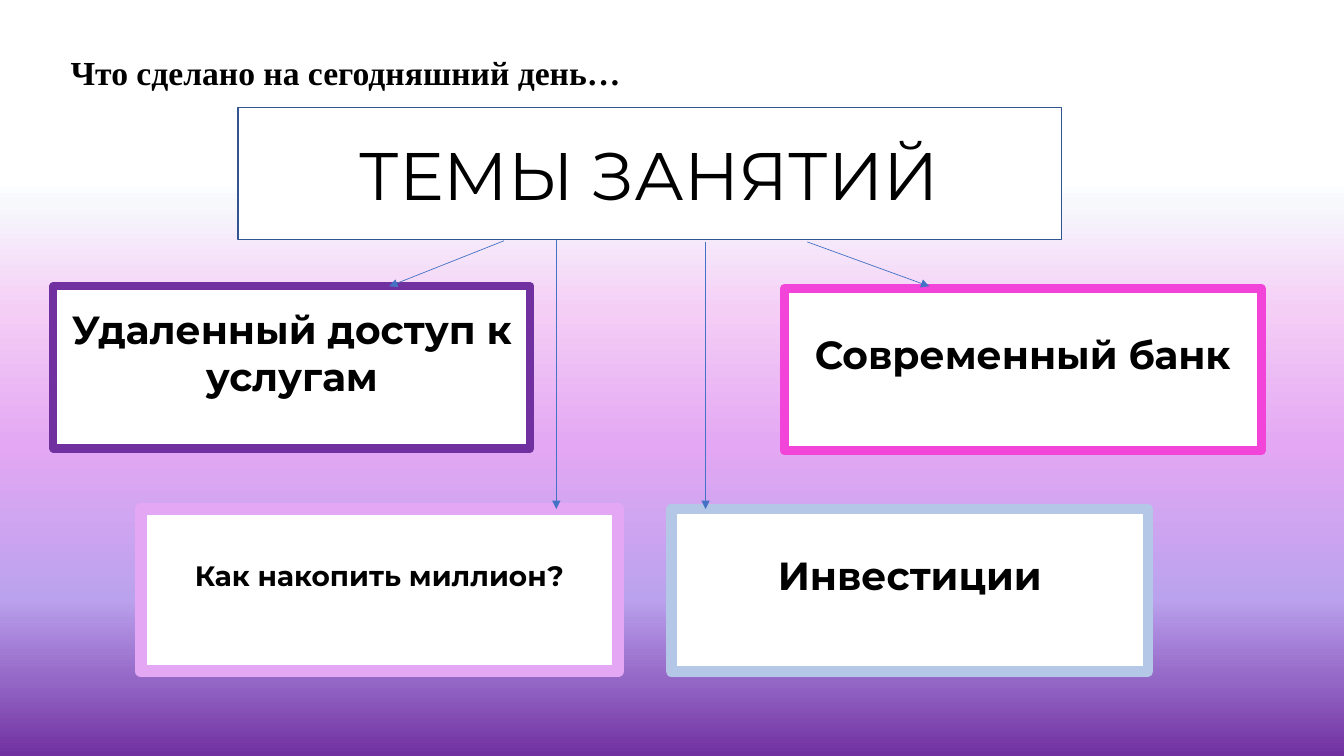
from lxml import etree
from pptx import Presentation
from pptx.dml.color import RGBColor
from pptx.enum.shapes import MSO_CONNECTOR, MSO_SHAPE
from pptx.enum.text import MSO_ANCHOR, MSO_AUTO_SIZE, PP_ALIGN
from pptx.oxml.ns import qn
from pptx.util import Pt

RECT = MSO_SHAPE.RECTANGLE
STRAIGHT = MSO_CONNECTOR.STRAIGHT
LEFT, CENTER = PP_ALIGN.LEFT, PP_ALIGN.CENTER
TOP, MIDDLE = MSO_ANCHOR.TOP, MSO_ANCHOR.MIDDLE
NO_FIT = MSO_AUTO_SIZE.NONE
TITLE_ONLY = 5

COLORS = {
    "white": "FFFFFF", "black": "000000", "mist": "F6F8FC", "blush": "F5CEF6",
    "orchid": "E3A7F3", "lavender": "BBA2EE", "violet": "9467C6",
    "purple": "7030A0", "pink": "F244D9", "sky": "B4C7E7",
    "navy": "325491", "blue": "4472C4",
}


def rgb(name):
    return RGBColor.from_string(COLORS[name])


class Deck:
    """Slide style and the current slide; all lengths are in points."""

    heading_font, body_font = "Times New Roman", "Montserrat"

    def __init__(self, prs):
        self.s = prs.slides.add_slide(prs.slide_layouts[TITLE_ONLY])

    def background(self, stops):
        fill = self.s.background.fill
        fill.gradient()
        fill.gradient_angle = 270
        gs_list = self.s.element.find(".//" + qn("a:gsLst"))
        for gs in list(gs_list):
            gs_list.remove(gs)
        for percent, color in stops:
            gs = etree.SubElement(gs_list, qn("a:gs"), pos=str(percent * 1000))
            etree.SubElement(gs, qn("a:srgbClr"), val=COLORS[color])

    def put_text(self, sp, text, size, font, bold, align, frame):
        tf = sp.text_frame
        for name, value in frame.items():
            setattr(tf, name, value)
        p = tf.paragraphs[0]
        p.alignment = align
        r = p.add_run()
        r.text = text
        for name, value in {"size": Pt(size), "name": font, "bold": bold}.items():
            setattr(r.font, name, value)
        r.font.color.rgb = rgb("black")
        return p

    def title(self, text, left, top, width, height):
        sp = self.s.shapes.title
        place = {"left": left, "top": top, "width": width, "height": height}
        for name, value in place.items():
            setattr(sp, name, Pt(value))
        frame = {"word_wrap": True, "auto_size": NO_FIT,
                 "vertical_anchor": TOP, "margin_top": Pt(6)}
        p = self.put_text(sp, text, 24, self.heading_font, True, LEFT, frame)
        p.line_spacing = 1.1

    def box(self, text, left, top, width, height, line, weight, size,
            bold=True, margin_bottom=25.5):
        sp = self.s.shapes.add_shape(RECT, Pt(left), Pt(top), Pt(width), Pt(height))
        sp.shadow.inherit = False
        sp.fill.solid()
        sp.fill.fore_color.rgb = rgb("white")
        sp.line.color.rgb = rgb(line)
        sp.line.width = Pt(weight)
        frame = {"word_wrap": True, "vertical_anchor": MIDDLE,
                 "margin_bottom": Pt(margin_bottom)}
        self.put_text(sp, text, size, self.body_font, bold, CENTER, frame)

    def arrow(self, x1, y1, x2, y2):
        c = self.s.shapes.add_connector(STRAIGHT, Pt(x1), Pt(y1), Pt(x2), Pt(y2))
        c.line.color.rgb = rgb("blue")
        c.line.width = Pt(0.5)
        props = c.element.spPr
        etree.SubElement(props.find(qn("a:ln")), qn("a:tailEnd"), type="triangle")
        etree.SubElement(props, qn("a:effectLst"))


def main():
    prs = Presentation()
    prs.slide_width, prs.slide_height = Pt(960), Pt(540)
    deck = Deck(prs)

    # Background and heading
    deck.background([(24, "white"), (27, "mist"), (41, "blush"), (59, "orchid"),
                     (79, "lavender"), (90, "violet"), (100, "purple")])
    deck.title("Что сделано на сегодняшний день…", 43.2, 28, 916, 51)
    deck.box("ТЕМЫ ЗАНЯТИЙ", 169.9, 77, 588.2, 94.3, "navy", 1, 48,
             bold=False, margin_bottom=3.6)

    # Lesson topics
    topics = [
        ("Удаленный доступ к услугам", 38.2, 204.5, "purple", 5.75, 28),
        ("Современный банк", 560.2, 206, "pink", 6.5, 28),
        ("Как накопить миллион?", 100.8, 363.6, "orchid", 8.75, 20),
        ("Инвестиции", 479.5, 363.6, "sky", 7.75, 28),
    ]
    for text, left, top, line, weight, size in topics:
        deck.box(text, left, top, 340.6, 115.9, line, weight, size)

    # Arrows from the heading box to each topic
    for ends in [(360, 172, 278, 204.5), (576.7, 172.8, 663.8, 204.5),
                 (397.4, 171.4, 397.4, 363.6), (504, 172.8, 504, 363.6)]:
        deck.arrow(*ends)

    prs.save("out.pptx")


if __name__ == "__main__":
    main()
